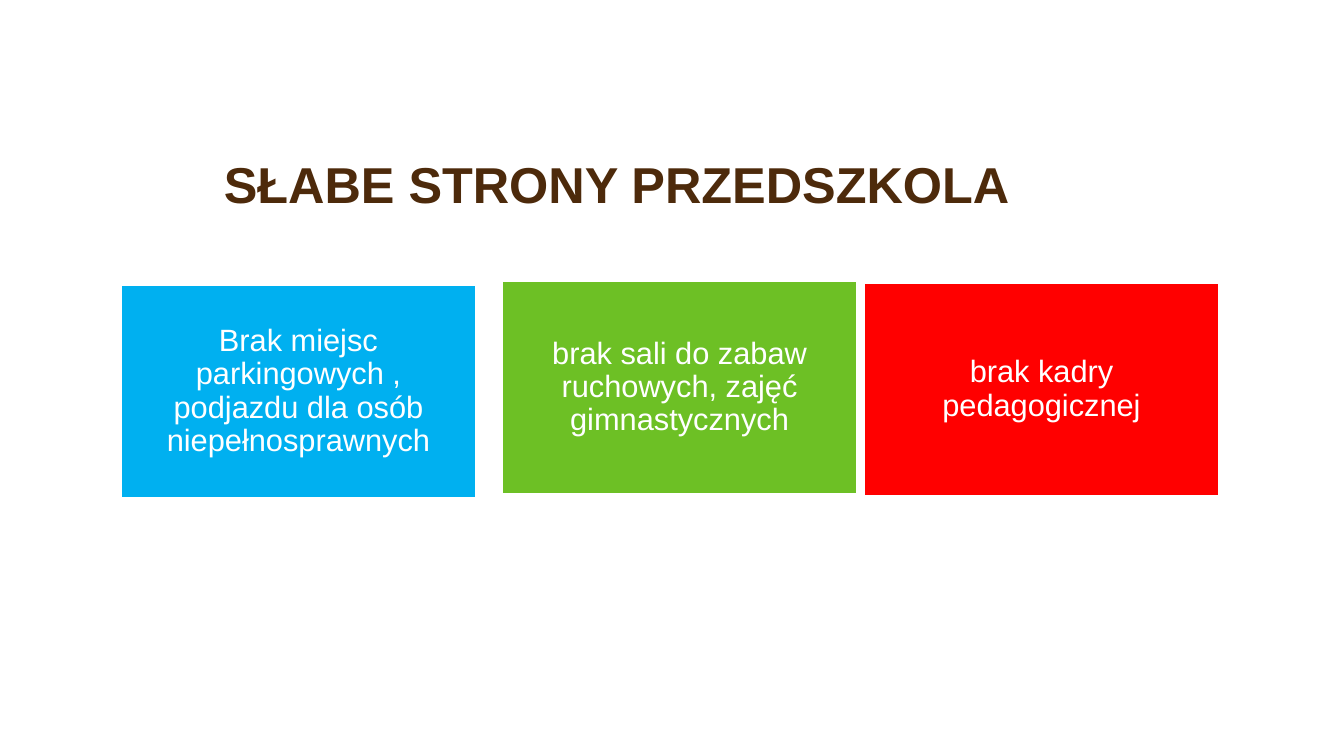
from dataclasses import dataclass

from pptx import Presentation
from pptx import util as u
from pptx.dml.color import RGBColor
from pptx.enum import shapes, text


@dataclass
class Theme:
    font: str = "Arial"
    title: str = "4D2A0B"
    white: str = "FFFFFF"
    blue: str = "00B0F0"
    green: str = "6DC025"
    red: str = "FF0000"
    title_size: int = 36
    card_size: int = 22


theme = Theme()


def write(sp, words, *, size, color, bold=False, align=text.PP_ALIGN.LEFT,
          anchor=text.MSO_ANCHOR.TOP, inset=None):
    tf = sp.text_frame
    tf.word_wrap = True
    tf.auto_size = text.MSO_AUTO_SIZE.NONE
    tf.vertical_anchor = anchor
    if inset is not None:
        tf.margin_left = tf.margin_right = u.Inches(inset)
        tf.margin_top = tf.margin_bottom = u.Inches(inset)
    p = tf.paragraphs[0]
    p.alignment = align
    p.line_spacing = 0.9
    p.space_before = u.Pt(0)
    r = p.add_run()
    r.text = words
    r.font.name = theme.font
    r.font.size = u.Pt(size)
    r.font.bold = bold
    r.font.color.rgb = RGBColor.from_string(color)


prs = Presentation()
prs.slide_width, prs.slide_height = u.Inches(13.33), u.Inches(7.5)
s = prs.slides.add_slide(prs.slide_layouts[5])

# Title
title = s.shapes.title
title.left, title.top = u.Inches(2.12), u.Inches(1.54)
title.width, title.height = u.Inches(11), u.Inches(1.33)
write(title, "SŁABE STRONY PRZEDSZKOLA", size=theme.title_size,
      color=theme.title, bold=True)

# Row of weaknesses: equal cards, slightly staggered
card_w, card_h = u.Inches(3.52), u.Inches(2.11)
cards = [
    (1.2, 2.83, theme.blue,
     "Brak miejsc parkingowych , podjazdu dla osób niepełnosprawnych"),
    (4.98, 2.79, theme.green,
     "brak sali do zabaw ruchowych, zajęć gimnastycznych"),
    (8.57, 2.81, theme.red, "brak kadry pedagogicznej"),
]
for left, top, color, words in cards:
    sp = s.shapes.add_shape(shapes.MSO_SHAPE.RECTANGLE, u.Inches(left),
                            u.Inches(top), card_w, card_h)
    sp.shadow.inherit = False
    sp.fill.solid()
    sp.fill.fore_color.rgb = RGBColor.from_string(color)
    sp.line.color.rgb = RGBColor.from_string(theme.white)
    sp.line.width = u.Pt(1)
    write(sp, words, size=theme.card_size, color=theme.white, inset=0.09,
          align=text.PP_ALIGN.CENTER, anchor=text.MSO_ANCHOR.MIDDLE)

prs.save("out.pptx")
